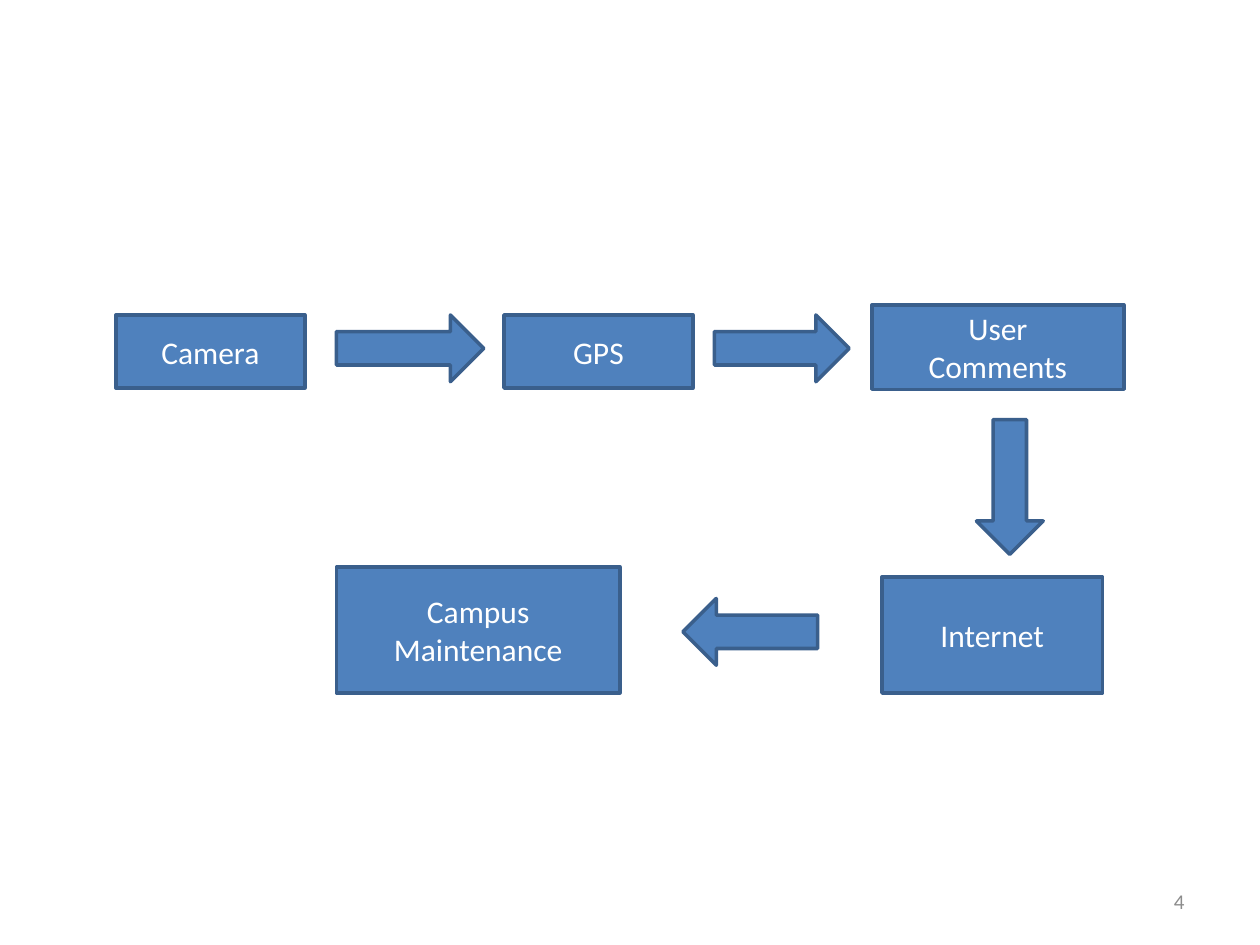
from pptx import Presentation
from pptx.dml.color import RGBColor
from pptx.enum import shapes, text
from pptx.util import Inches, Pt

BLUE = RGBColor(0x4F, 0x81, 0xBD)
DARK_BLUE = RGBColor(0x3A, 0x5F, 0x8C)
WHITE = RGBColor(0xFF, 0xFF, 0xFF)
GRAY = RGBColor(0x8C, 0x8C, 0x8C)

SHAPE = shapes.MSO_SHAPE
ALIGN = text.PP_ALIGN
ARROW_WIDTH, ARROW_LENGTH = 0.53, 1.07

# Label lines and left, top, width, height of each step
STEPS = [
    (["Camera"], (0.92, 2.5, 1.5, 0.58)),
    (["GPS"], (4, 2.5, 1.5, 0.58)),
    (["User", "Comments"], (6.92, 2.42, 2, 0.67)),
    (["Internet"], (7, 4.58, 1.75, 0.92)),
    (["Campus", "Maintenance"], (2.67, 4.5, 2.25, 1)),
]

# Arrows between the steps, in order
ARROWS = [
    (SHAPE.RIGHT_ARROW, (2.67, 2.5, 1.17, ARROW_WIDTH)),
    (SHAPE.RIGHT_ARROW, (5.67, 2.5, ARROW_LENGTH, ARROW_WIDTH)),
    (SHAPE.DOWN_ARROW, (7.75, 3.33, ARROW_WIDTH, ARROW_LENGTH)),
    (SHAPE.LEFT_ARROW, (5.42, 4.75, ARROW_LENGTH, ARROW_WIDTH)),
]


def write_lines(sp, lines, size, color, align):
    tf = sp.text_frame
    tf.word_wrap = True
    tf.vertical_anchor = text.MSO_ANCHOR.MIDDLE
    font_format = {"name": "Calibri", "size": Pt(size)}
    for i, line in enumerate(lines):
        p = tf.add_paragraph() if i else tf.paragraphs[0]
        p.alignment = align
        r = p.add_run()
        r.text = line
        for name, value in font_format.items():
            setattr(r.font, name, value)
        r.font.color.rgb = color


def add_block(s, kind, box):
    sp = s.shapes.add_shape(kind, *map(Inches, box))
    sp.shadow.inherit = False
    sp.fill.solid()
    sp.fill.fore_color.rgb = BLUE
    sp.line.color.rgb = DARK_BLUE
    sp.line.width = Pt(2)
    return sp


def add_step(s, lines, box):
    sp = add_block(s, SHAPE.RECTANGLE, box)
    write_lines(sp, lines, 18, WHITE, ALIGN.CENTER)


def add_page_number(s, number, box):
    sp = s.shapes.add_textbox(*map(Inches, box))
    write_lines(sp, [number], 12, GRAY, ALIGN.RIGHT)


def main():
    prs = Presentation()
    prs.slide_width, prs.slide_height = Inches(10), Inches(7.5)
    s = prs.slides.add_slide(prs.slide_layouts[6])

    # Process steps
    for lines, box in STEPS:
        add_step(s, lines, box)

    # Flow arrows
    for kind, box in ARROWS:
        add_block(s, kind, box)

    # Footer
    add_page_number(s, "4", (7.17, 6.95, 2.33, 0.4))

    prs.save("out.pptx")


if __name__ == "__main__":
    main()
